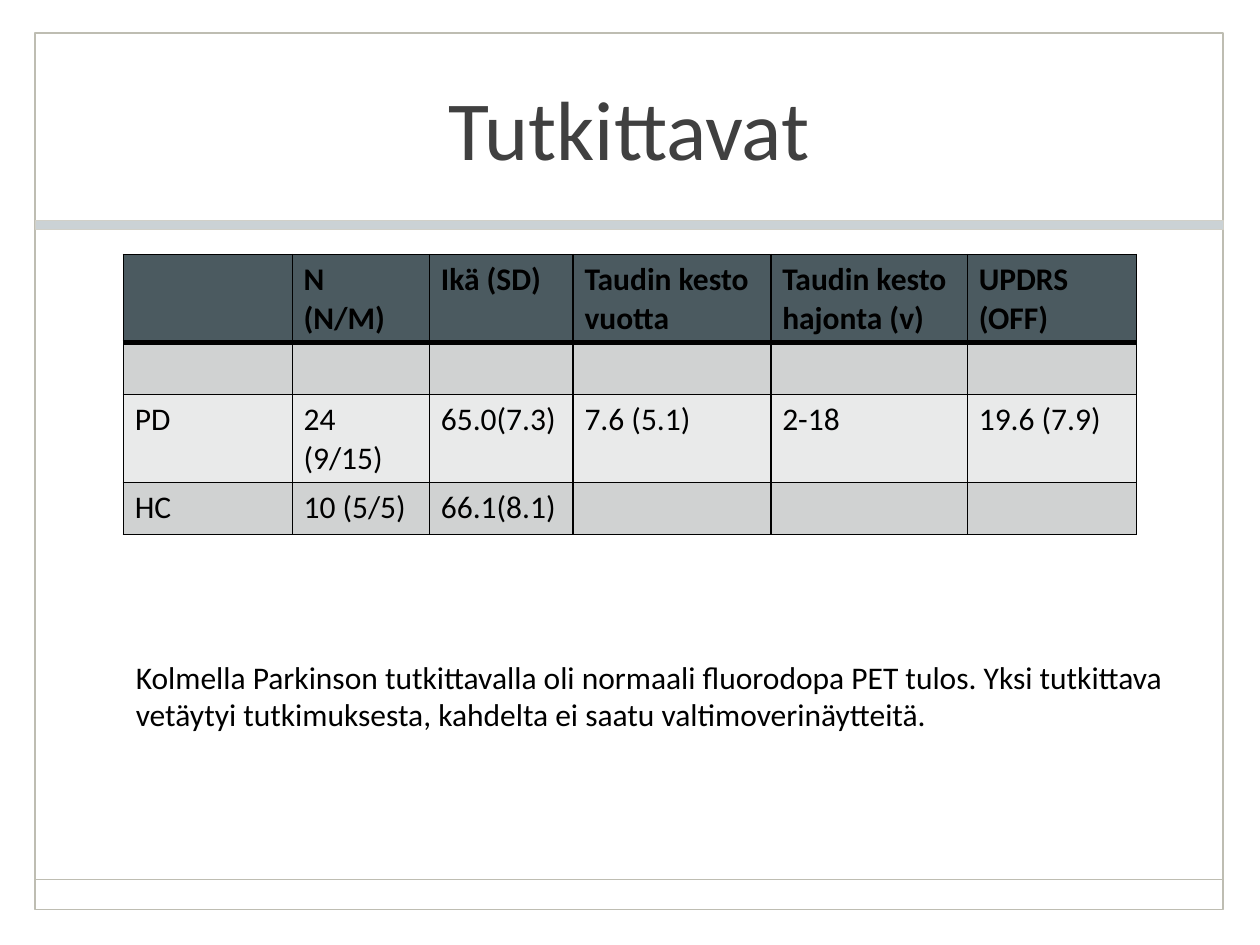
import dataclasses

import pptx
import pptx.dml.color
import pptx.enum.shapes
import pptx.enum.text
import pptx.oxml
import pptx.oxml.ns
import pptx.util
from pptx.util import Inches


@dataclasses.dataclass(frozen=True)
class Theme:
    font: str = "Calibri"
    title_size: int = 48
    body_size: int = 18
    title: str = "404040"
    text: str = "000000"
    frame: str = "BEBDB2"
    band: str = "CBD2D5"
    band_edge: str = "D1D0C8"
    header: str = "4B5A60"
    dark_row: str = "D0D2D2"
    light_row: str = "E9EAEA"


THEME = Theme()
ANCHOR = pptx.enum.text.MSO_ANCHOR
ALIGN = pptx.enum.text.PP_ALIGN


def rgb(value):
    return pptx.dml.color.RGBColor.from_string(value)


def write(text_frame, text, size=THEME.body_size, color=THEME.text, bold=False,
          align=ALIGN.LEFT, anchor=ANCHOR.TOP):
    text_frame.word_wrap = True
    text_frame.vertical_anchor = anchor
    for index, line in enumerate(text.split("\n")):
        paragraph = text_frame.paragraphs[0] if index == 0 else text_frame.add_paragraph()
        paragraph.alignment = align
        run = paragraph.add_run()
        run.text = line
        run.font.name = THEME.font
        run.font.size = pptx.util.Pt(size)
        run.font.bold = bold
        run.font.color.rgb = rgb(color)


def add_rectangle(slide, left, top, width, height, edge, edge_width, fill=None):
    rectangle = slide.shapes.add_shape(
        pptx.enum.shapes.MSO_SHAPE.RECTANGLE, left, top, width, height)
    rectangle.shadow.inherit = False
    if fill:
        rectangle.fill.solid()
        rectangle.fill.fore_color.rgb = rgb(fill)
    else:
        rectangle.fill.background()
    rectangle.line.color.rgb = rgb(edge)
    rectangle.line.width = pptx.util.Pt(edge_width)


def add_page_frame(slide, left, top, width, height):
    add_rectangle(slide, left, top, width, height, THEME.frame, 1)
    footer_y = top + height - Inches(0.24)
    footer_rule = slide.shapes.add_connector(
        pptx.enum.shapes.MSO_CONNECTOR.STRAIGHT, left, footer_y, left + width, footer_y)
    footer_rule.line.color.rgb = rgb(THEME.frame)
    footer_rule.line.width = pptx.util.Pt(1)
    properties = footer_rule._element.spPr
    properties.append(pptx.oxml.parse_xml(f"<a:effectLst {pptx.oxml.ns.nsdecls('a')}/>"))
    add_rectangle(slide, left, top + Inches(1.49), width, Inches(0.07),
                  THEME.band_edge, 0.25, fill=THEME.band)


def add_text(slide, left, top, width, height, text, **text_format):
    box = slide.shapes.add_textbox(left, top, width, height)
    write(box.text_frame, text, **text_format)


def set_borders(cell, **widths):
    properties = cell._tc.get_or_add_tcPr()
    for side in "LRTB":
        line_width = pptx.util.Pt(widths.get(side, 1))
        properties.append(pptx.oxml.parse_xml(
            f'<a:ln{side} {pptx.oxml.ns.nsdecls("a")} w="{line_width}"><a:solidFill>'
            f'<a:srgbClr val="{THEME.text}"/></a:solidFill></a:ln{side}>'))


def add_subject_table(slide, left, top, width, height):
    rows = [
        ["", "N\n(N/M)", "Ikä (SD)", "Taudin kesto vuotta",
         "Taudin kesto\nhajonta (v)", "UPDRS (OFF)"],
        [""] * 6,
        ["PD", "24 (9/15)", "65.0(7.3)", "7.6 (5.1)", "2-18", "19.6 (7.9)"],
        ["HC", "10 (5/5)", "66.1(8.1)", "", "", ""],
    ]
    fills = [THEME.header, THEME.dark_row, THEME.light_row, THEME.dark_row]
    heavy_sides = [{"B": 3}, {"T": 3}, {}, {}]
    column_widths = [1.34, 1.09, 1.14, 1.57, 1.56, 1.34]

    table = slide.shapes.add_table(
        len(rows), len(column_widths), left, top, width, height).table
    for column, column_width in zip(table.columns, column_widths):
        column.width = Inches(column_width)
    for row_index, (row, values) in enumerate(zip(table.rows, rows)):
        row.height = Inches(0.41)
        for cell, value in zip(row.cells, values):
            set_borders(cell, **heavy_sides[row_index])
            cell.fill.solid()
            cell.fill.fore_color.rgb = rgb(fills[row_index])
            cell.margin_left = cell.margin_right = Inches(0.09)
            cell.margin_top = cell.margin_bottom = Inches(0.05)
            if value:
                write(cell.text_frame, value, bold=row_index == 0)


def main():
    presentation = pptx.Presentation()
    presentation.slide_width = Inches(10)
    presentation.slide_height = Inches(7.5)
    slide = presentation.slides.add_slide(presentation.slide_layouts[6])

    add_page_frame(slide, Inches(0.28), Inches(0.26), Inches(9.43), Inches(6.96))
    add_text(slide, Inches(0.98), Inches(0.27), Inches(8.03), Inches(1.47), "Tutkittavat",
             size=THEME.title_size, color=THEME.title, align=ALIGN.CENTER,
             anchor=ANCHOR.MIDDLE)
    add_subject_table(slide, Inches(0.98), Inches(2.02), Inches(8.04), Inches(1.64))
    add_text(slide, Inches(0.98), Inches(5.17), Inches(8.74), Inches(0.71),
             "Kolmella Parkinson tutkittavalla oli normaali fluorodopa PET tulos. "
             "Yksi tutkittava vetäytyi tutkimuksesta, kahdelta ei saatu "
             "valtimoverinäytteitä.")
    presentation.save("out.pptx")


if __name__ == "__main__":
    main()
